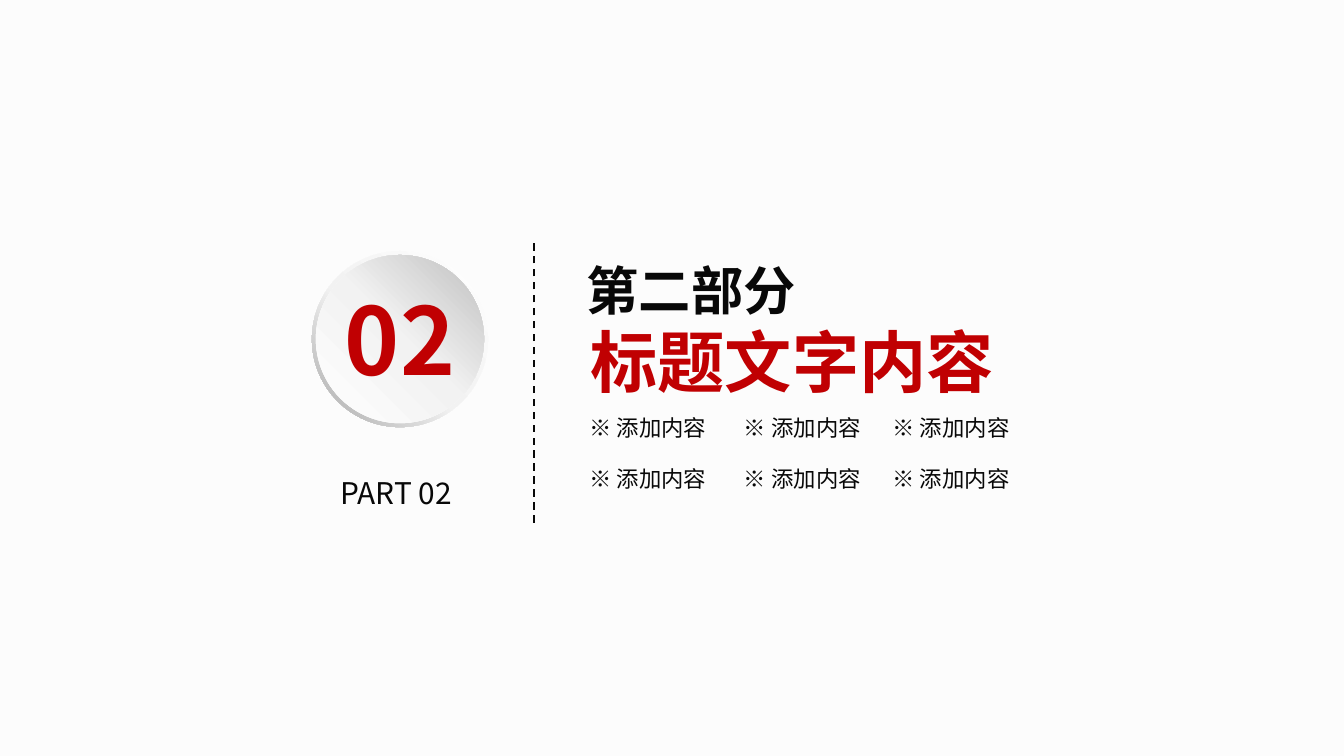
from dataclasses import dataclass

from lxml import etree
from pptx import Presentation
from pptx.dml.color import RGBColor
from pptx.enum.dml import MSO_LINE
from pptx.enum.shapes import MSO_CONNECTOR, MSO_SHAPE
from pptx.enum.text import MSO_ANCHOR, MSO_AUTO_SIZE, PP_ALIGN
from pptx.oxml.ns import qn
from pptx.util import Cm, Pt

DASH = MSO_LINE.DASH
STRAIGHT = MSO_CONNECTOR.STRAIGHT
DONUT, OVAL = MSO_SHAPE.DONUT, MSO_SHAPE.OVAL
TOP = MSO_ANCHOR.TOP
FIT_SHAPE = MSO_AUTO_SIZE.SHAPE_TO_FIT_TEXT
LEFT, CENTER = PP_ALIGN.LEFT, PP_ALIGN.CENTER
TITLE_ONLY = 5


@dataclass(frozen=True)
class Theme:
    font: str = "Noto Sans CJK SC"
    paper: str = "FCFCFC"
    ink: str = "080808"
    accent: str = "C00002"
    rim: tuple = ((0, "FFFFFF"), (55, "F2F2F2"), (100, "A6A6A6"))
    face: tuple = ((0, "FFFFFF"), (51, "F2F2F2"), (100, "BFBFBF"))
    item_size: int = 12
    label_size: int = 16
    section_size: int = 28
    title_size: int = 36
    number_size: int = 50


class SlideBuilder:
    def __init__(self, slide, theme):
        self.slide = slide
        self.theme = theme
        background = slide.background.fill
        background.solid()
        background.fore_color.rgb = RGBColor.from_string(theme.paper)

    def style(self, paragraph, size, color, bold=False):
        for run in paragraph.runs:
            run.font.name = self.theme.font
            run.font.size = Pt(size)
            run.font.bold = bold
            run.font.color.rgb = RGBColor.from_string(color)
            east_asian = etree.SubElement(run.font._element, qn("a:ea"))
            east_asian.set("typeface", self.theme.font)

    def title(self, section, heading, left, top, width, height):
        title = self.slide.shapes.title
        title.left, title.top = Cm(left), Cm(top)
        title.width, title.height = Cm(width), Cm(height)
        frame = title.text_frame
        frame.text = f"{section}\n{heading}"
        frame.word_wrap = True
        frame.auto_size = FIT_SHAPE
        frame.vertical_anchor = TOP
        frame.margin_left = frame.margin_right = 0
        section_line, heading_line = frame.paragraphs
        section_line.alignment = LEFT
        section_line._p.get_or_add_pPr().set("marL", str(Cm(0.44)))
        heading_line.alignment = CENTER
        self.style(section_line, self.theme.section_size, self.theme.ink, True)
        self.style(heading_line, self.theme.title_size, self.theme.accent, True)

    def text(self, words, left, top, width, height, size, color,
             bold=False, inset=(0, 0)):
        box = self.slide.shapes.add_textbox(Cm(left), Cm(top), Cm(width), Cm(height))
        frame = box.text_frame
        frame.text = words
        frame.word_wrap = True
        frame.auto_size = FIT_SHAPE
        frame.margin_left = frame.margin_right = Cm(inset[0])
        frame.margin_top = frame.margin_bottom = Cm(inset[1])
        self.style(frame.paragraphs[0], size, color, bold)
        return box

    def disc(self, kind, center_x, center_y, diameter, stops, angle):
        disc = self.slide.shapes.add_shape(
            kind, Cm(center_x - diameter / 2), Cm(center_y - diameter / 2),
            Cm(diameter), Cm(diameter))
        disc.shadow.inherit = False
        disc.line.fill.background()
        disc.fill.gradient()
        disc.fill.gradient_angle = 360 - angle
        stop_list = disc._element.spPr.find(qn("a:gradFill")).find(qn("a:gsLst"))
        stop_list.clear()
        for position, color in stops:
            stop = etree.SubElement(stop_list, qn("a:gs"), pos=str(position * 1000))
            etree.SubElement(stop, qn("a:srgbClr"), val=color)
        return disc

    def divider(self, x, start_y, end_y):
        divider = self.slide.shapes.add_connector(
            STRAIGHT, Cm(x), Cm(start_y), Cm(x), Cm(end_y))
        divider.line.color.rgb = RGBColor.from_string(self.theme.ink)
        divider.line.width = Pt(1)
        divider.line.dash_style = DASH
        etree.SubElement(divider._element.spPr, qn("a:effectLst"))

    def badge(self, number, center_x, center_y):
        theme = self.theme
        rim = self.disc(DONUT, center_x, center_y, 3.33, theme.rim, 135)
        rim.adjustments[0] = 0.049
        face = self.disc(OVAL, center_x, center_y, 3.18, theme.face, 315)
        numeral = self.text(number, center_x - 1.04, center_y - 1.08, 2.51, 2.13,
                            theme.number_size, theme.accent, bold=True)
        self.slide.shapes.add_group_shape([rim, face, numeral])


def main():
    theme = Theme()
    deck = Presentation()
    deck.slide_width, deck.slide_height = Cm(25.4), Cm(14.29)
    builder = SlideBuilder(
        deck.slides.add_slide(deck.slide_layouts[TITLE_ONLY]), theme)

    builder.title("第二部分", "标题文字内容", 10.65, 4.75, 8.2, 3)
    builder.divider(10.1, 9.88, 4.56)
    builder.text("PART 02", 6.44, 8.97, 2.51, 0.69, theme.label_size, theme.ink)
    for top in (7.75, 8.71):
        for left in (10.96, 13.88, 16.69):
            builder.text("※ 添加内容", left, top, 2.8, 0.69,
                         theme.item_size, theme.ink, inset=(0.18, 0.08))
    builder.badge("02", 7.56, 6.41)

    deck.save("out.pptx")


if __name__ == "__main__":
    main()
